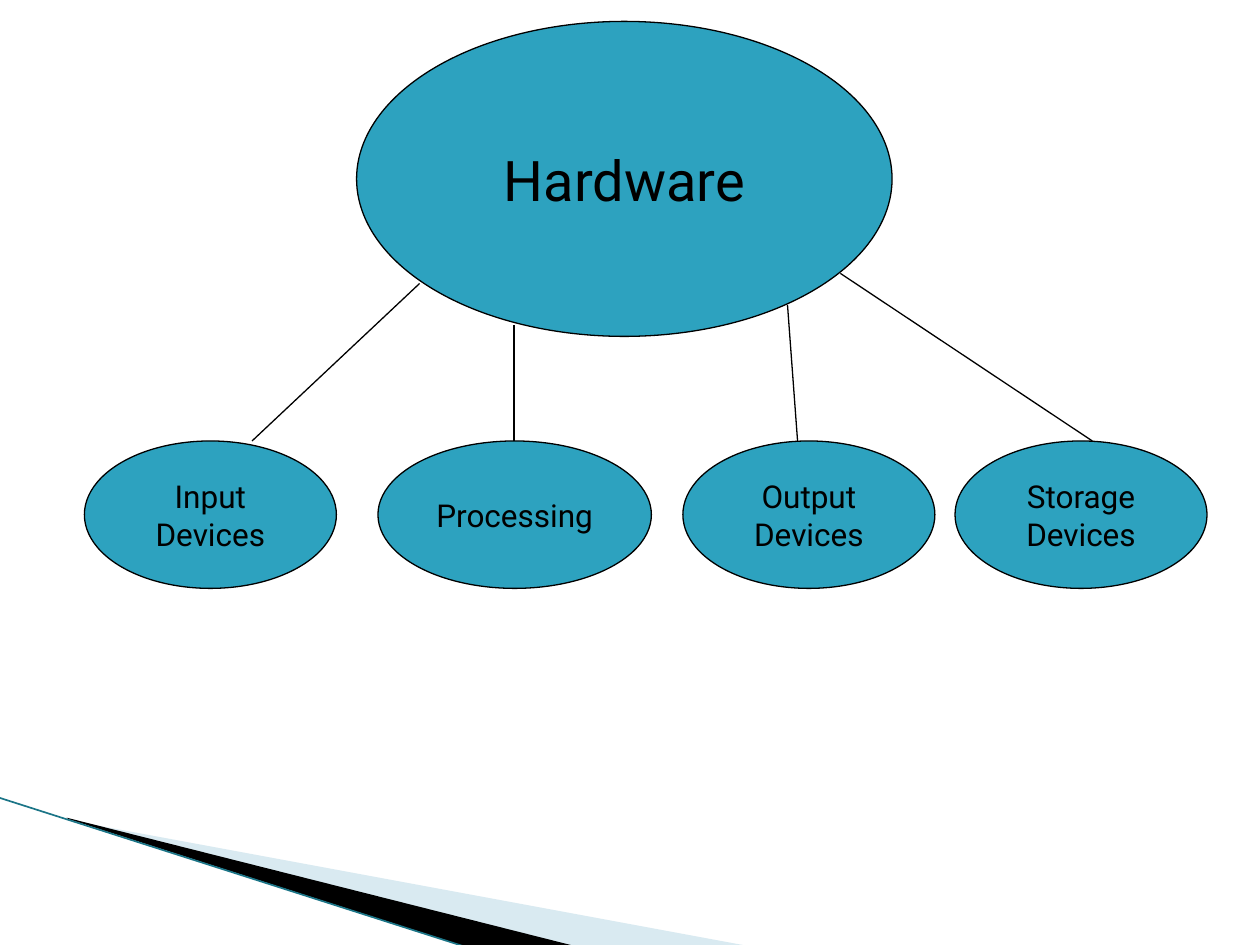
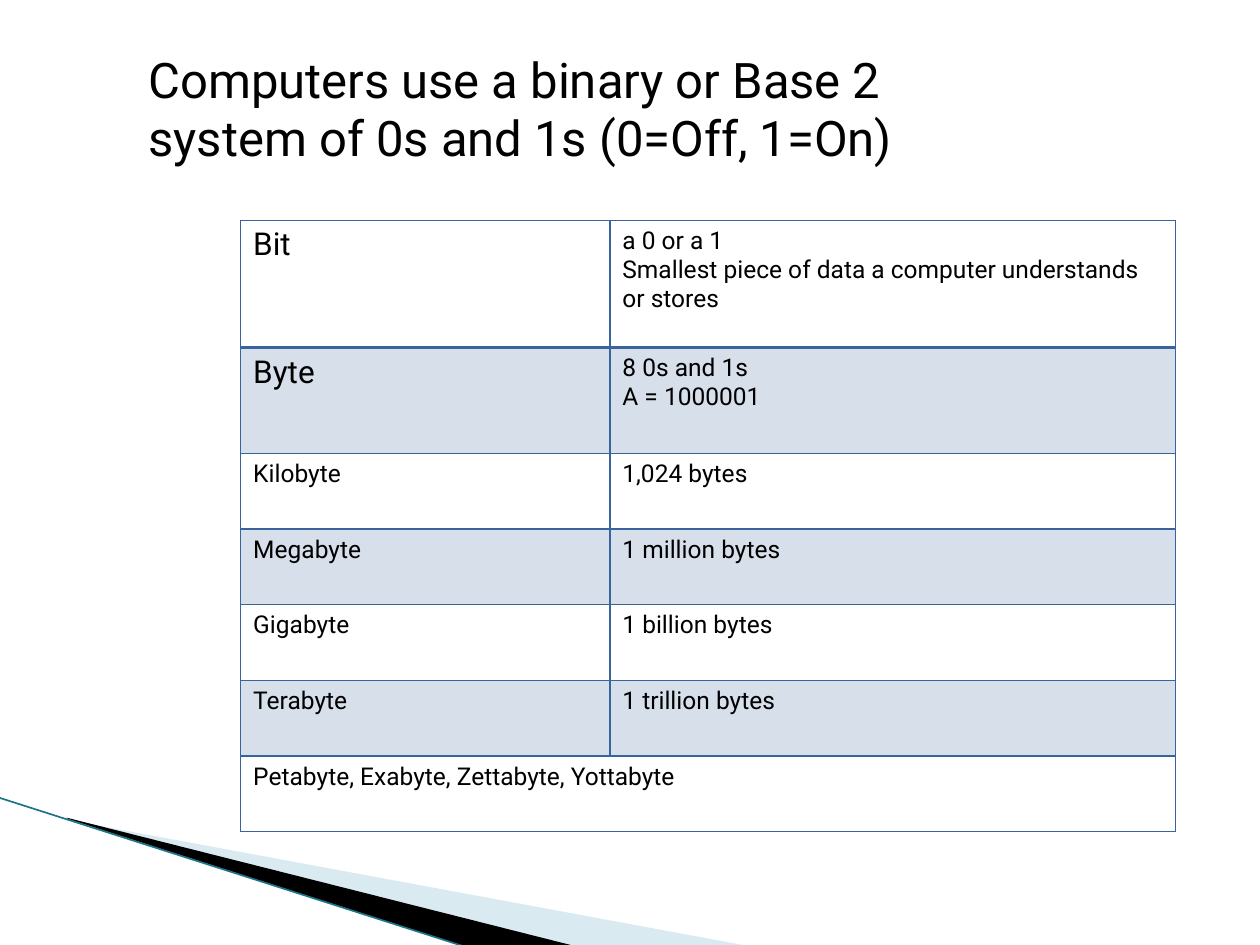
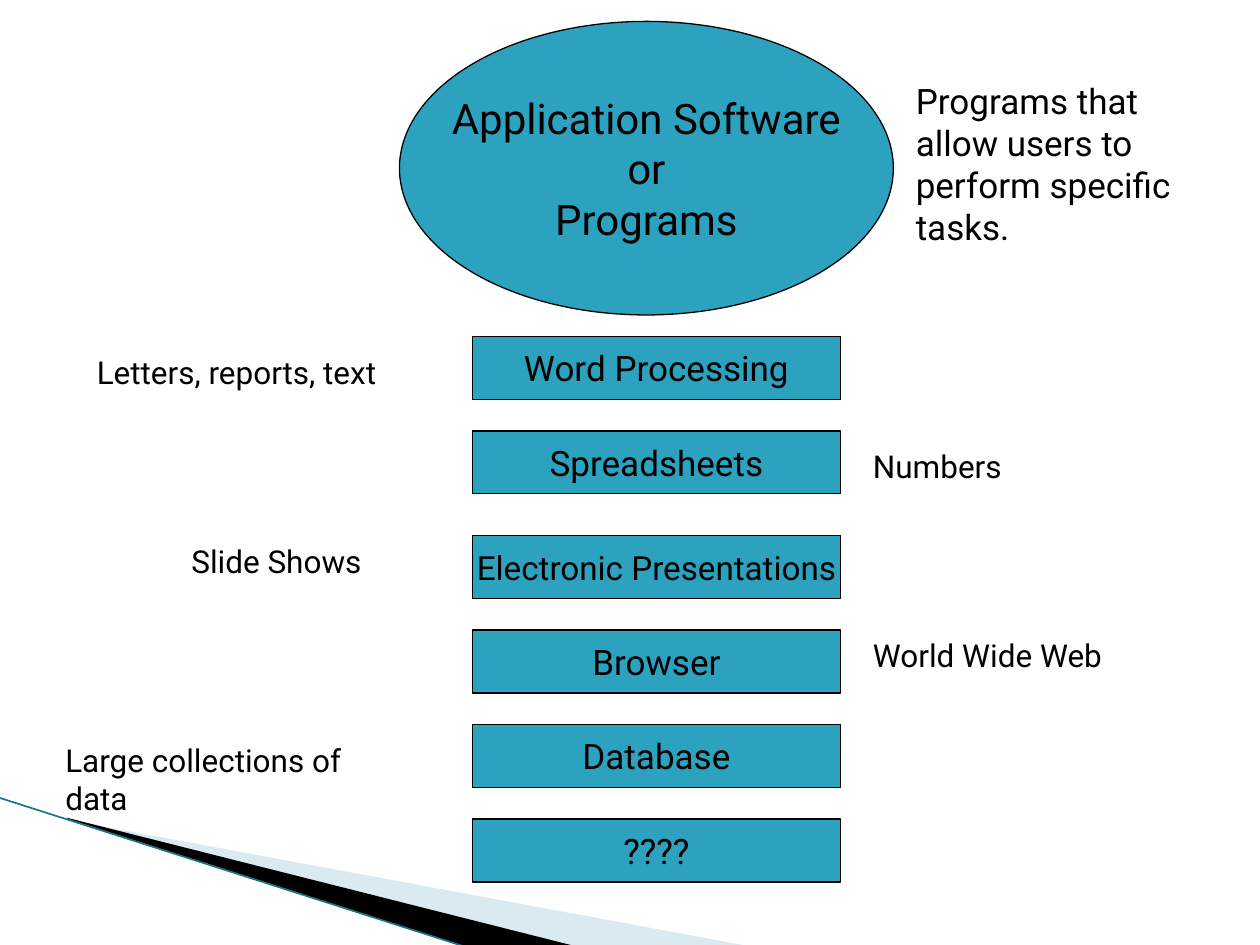
from typing import NamedTuple

from lxml import etree
from pptx import Presentation
from pptx.dml.color import RGBColor
from pptx.enum import shapes, text
from pptx.oxml.ns import qn
from pptx.util import Inches, Pt

FONT = "Roboto"
BLACK, TEAL, PALE, EDGE, GRID = "000000", "2DA2BF", "A0CBDC", "1B7587", "39639D"
OVAL, RECT = shapes.MSO_SHAPE.OVAL, shapes.MSO_SHAPE.RECTANGLE
CENTER = text.PP_ALIGN.CENTER


class Node(NamedTuple):
    """A filled shape with centred lines of text."""
    lines: list[str]
    left: float
    top: float
    wide: float
    high: float
    size: float = 18
    kind: int = OVAL


class Note(NamedTuple):
    words: str
    left: float
    top: float
    wide: float
    high: float = 0.4
    size: float = 18


class Line(NamedTuple):
    x1: float
    y1: float
    x2: float
    y2: float
    color: str = BLACK
    width: float = 0.75


class Wedge(NamedTuple):
    """An outline in slide inches, and the frame that holds it."""
    points: list[tuple[float, float]]
    frame: tuple[float, float, float, float]
    color: str
    alpha: int = 100


class Row(NamedTuple):
    name: str
    facts: list[str]
    high: float = 0.6
    size: float = 14


WEDGES = [
    Wedge([(0.55, 6.51), (5.95, 7.51), (4.56, 7.51), (0.55, 6.5)],
          (0.78, 5.47, 4.16, 1.58), PALE, 40),
    Wedge([(0.53, 6.49), (4.57, 7.51), (3.72, 7.52), (0.54, 6.5)],
          (-0.06, 6.33, 4.16, 0.92), BLACK),
]
RIM = Line(-0.01, 6.33, 3.71, 7.52, EDGE, 0.95)

PARTS = [
    Node(["Hardware"], 2.83, 0.17, 4.25, 2.5, 32),
    Node(["Input", "Devices"], 0.67, 3.5, 2, 1.17),
    Node(["Processing"], 3, 3.5, 2.17, 1.17),
    Node(["Output", "Devices"], 5.42, 3.5, 2, 1.17),
    Node(["Storage", "Devices"], 7.58, 3.5, 2, 1.17),
]
LINKS = [
    Line(2, 3.5, 3.33, 2.25),
    Line(4.08, 3.5, 4.08, 2.58),
    Line(6.33, 3.5, 6.25, 2.42),
    Line(8.67, 3.5, 6.67, 2.17),
]

TITLE = Note("Computers use a binary or Base 2 system of 0s and 1s (0=Off, 1=On)",
             1.08, 0.34, 7.08, 1.04, 28)
COLS = [2.93, 4.49]
UNITS = [
    Row("Bit", ["a 0 or a 1",
                "Smallest piece of data a computer understands or stores"], 1.01, 18),
    Row("Byte", ["8 0s and 1s", "A = 1000001"], 0.84, 18),
    Row("Kilobyte", ["1,024 bytes"]),
    Row("Megabyte", ["1 million bytes"]),
    Row("Gigabyte", ["1 billion bytes"]),
    Row("Terabyte", ["1 trillion bytes"]),
    Row("Petabyte, Exabyte, Zettabyte, Yottabyte", []),
]

APPS = Node(["Application Software", "or", "Programs"], 3.17, 0.17, 3.92, 2.33, 24)
KINDS = ["Word Processing", "Spreadsheets", "Electronic Presentations",
         "Browser", "Database", "????"]
NOTES = [
    Note("Programs that allow users to perform specific tasks.", 7.17, 0.58, 2.5, 1.43, 20),
    Note("Letters, reports, text", 0.67, 2.75, 2.83),
    Note("Numbers", 6.83, 3.5, 2.33),
    Note("Slide Shows", 1.42, 4.25, 1.75),
    Note("World Wide Web", 6.83, 5, 2.25),
    Note("Large collections of data", 0.42, 5.83, 2.9),
]


def rgb(code: str) -> RGBColor:
    return RGBColor.from_string(code)


def paint(item, props, color: str, alpha: int = 100) -> None:
    """Fill a shape or cell, whose properties element is props."""
    item.fill.solid()
    item.fill.fore_color.rgb = rgb(color)
    if alpha < 100:
        tone = props.find(qn("a:solidFill")).find(qn("a:srgbClr"))
        etree.SubElement(tone, qn("a:alpha"), val=str(alpha * 1000))


def write(frame, lines: list[str], size: float, align=text.PP_ALIGN.LEFT) -> None:
    for i, words in enumerate(lines):
        para = frame.add_paragraph() if i else frame.paragraphs[0]
        para.alignment = align
        run = para.add_run()
        run.text = words
        run.font.name, run.font.size = FONT, Pt(size)
        run.font.color.rgb = rgb(BLACK)


def add_node(slide, node: Node) -> None:
    shape = slide.shapes.add_shape(node.kind, Inches(node.left), Inches(node.top),
                                   Inches(node.wide), Inches(node.high))
    shape.shadow.inherit = False
    paint(shape, shape._element.spPr, TEAL)
    shape.line.color.rgb, shape.line.width = rgb(BLACK), Pt(0.75)
    frame = shape.text_frame
    frame.word_wrap = False
    frame.vertical_anchor = text.MSO_ANCHOR.MIDDLE
    write(frame, node.lines, node.size, CENTER)


def add_note(slide, note: Note) -> None:
    box = slide.shapes.add_textbox(Inches(note.left), Inches(note.top),
                                   Inches(note.wide), Inches(note.high))
    box.text_frame.word_wrap = True
    box.text_frame.auto_size = text.MSO_AUTO_SIZE.SHAPE_TO_FIT_TEXT
    write(box.text_frame, [note.words], note.size)


def add_line(slide, line: Line) -> None:
    link = slide.shapes.add_connector(shapes.MSO_CONNECTOR.STRAIGHT, Inches(line.x1),
                                      Inches(line.y1), Inches(line.x2), Inches(line.y2))
    link.line.color.rgb, link.line.width = rgb(line.color), Pt(line.width)
    etree.SubElement(link._element.spPr, qn("a:effectLst"))


def set_frame(shape, frame: tuple[float, float, float, float]) -> None:
    """Change the frame of a freeform and leave its outline in place."""
    left, top, wide, high = map(Inches, frame)
    props = shape._element.spPr
    for point in props.iter(qn("a:pt")):
        point.set("x", str(int(point.get("x")) + shape.left - left))
        point.set("y", str(int(point.get("y")) + shape.top - top))
    for outline in props.iter(qn("a:path")):
        outline.set("w", str(wide))
        outline.set("h", str(high))
    shape.left, shape.top, shape.width, shape.height = left, top, wide, high


def add_wedge(slide, wedge: Wedge) -> None:
    start, *rest = [(Inches(x), Inches(y)) for x, y in wedge.points]
    pen = slide.shapes.build_freeform(*start)
    pen.add_line_segments(rest)
    shape = pen.convert_to_shape()
    set_frame(shape, wedge.frame)
    shape.shadow.inherit = False
    paint(shape, shape._element.spPr, wedge.color, wedge.alpha)
    shape.line.fill.background()


def add_slide(deck):
    """Add a blank slide with the corner band."""
    slide = deck.slides.add_slide(deck.slide_layouts[6])
    for wedge in WEDGES:
        add_wedge(slide, wedge)
    add_line(slide, RIM)
    return slide


def edge(props, side: str, width: float) -> None:
    line = etree.SubElement(props, qn(f"a:ln{side}"), w=str(Pt(width)))
    fill = etree.SubElement(line, qn("a:solidFill"))
    etree.SubElement(fill, qn("a:srgbClr"), val=GRID)


def add_table(slide) -> None:
    high = sum(row.high for row in UNITS)
    table = slide.shapes.add_table(len(UNITS), len(COLS), Inches(1.91), Inches(1.75),
                                   Inches(sum(COLS)), Inches(high)).table
    table.first_row = table.horz_banding = False
    for col, wide in zip(table.columns, COLS):
        col.width = Inches(wide)
    for i, row in enumerate(UNITS):
        table.rows[i].height = Inches(row.high)
        for j in range(len(COLS)):
            cell = table.cell(i, j)
            props = cell._tc.get_or_add_tcPr()
            for side in "LRTB":
                thick = (i, side) in [(0, "B"), (1, "T")]
                edge(props, side, 2 if thick else 1)
            if i % 2:
                paint(cell, props, GRID, 20)
            else:
                cell.fill.background()
        write(table.cell(i, 0).text_frame, [row.name], row.size)
        if row.facts:
            write(table.cell(i, 1).text_frame, row.facts, 14)
        else:
            table.cell(i, 0).merge(table.cell(i, 1))


def main() -> None:
    deck = Presentation()
    deck.slide_width, deck.slide_height = Inches(10), Inches(7.5)

    slide = add_slide(deck)
    for node in PARTS:
        add_node(slide, node)
    for line in LINKS:
        add_line(slide, line)

    slide = add_slide(deck)
    add_table(slide)
    add_note(slide, TITLE)

    slide = add_slide(deck)
    add_node(slide, APPS)
    for i, name in enumerate(KINDS):
        top = 2.67 + 0.75 * i + (0.08 if i > 1 else 0)
        size = 19 if len(name) > 20 else 20
        add_node(slide, Node([name], 3.75, top, 2.92, 0.5, size, RECT))
    for note in NOTES:
        add_note(slide, note)

    deck.save("out.pptx")


if __name__ == "__main__":
    main()
